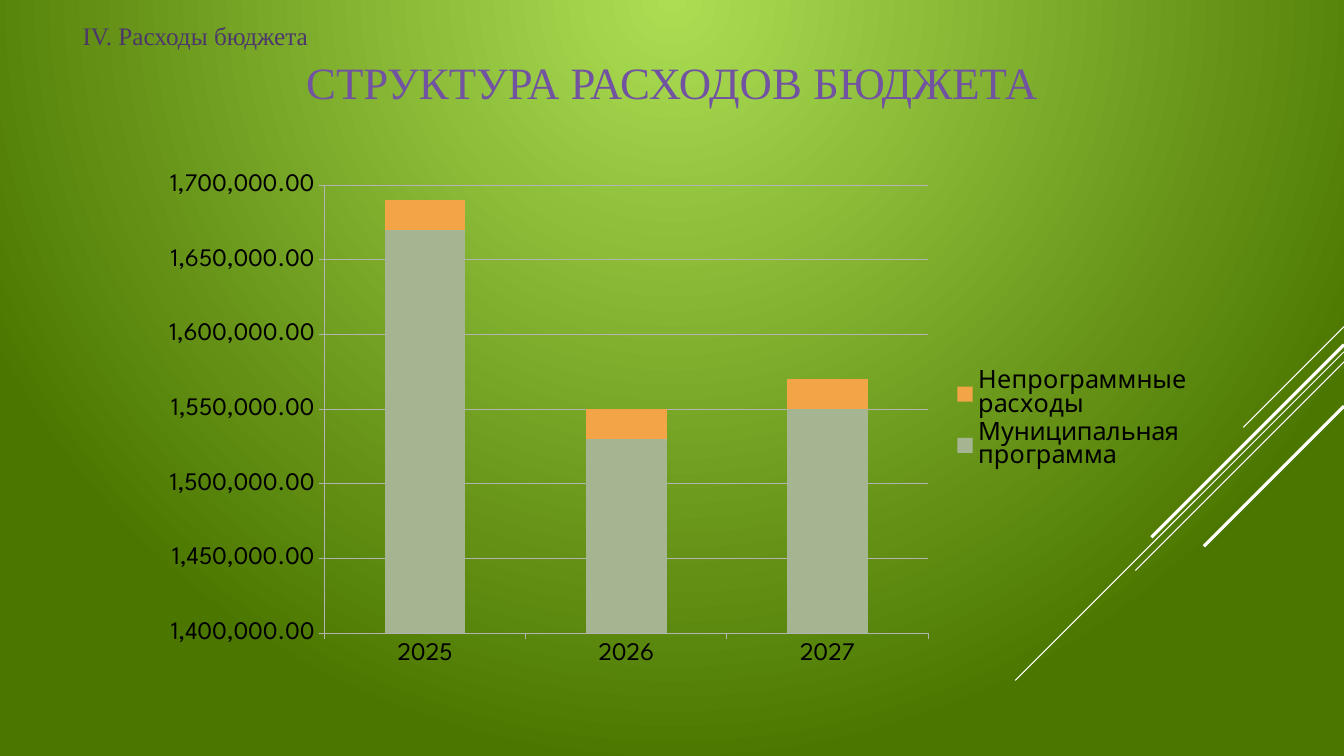
from lxml import etree
from pptx import Presentation
from pptx.chart.data import CategoryChartData
from pptx.dml.color import RGBColor
from pptx.enum.chart import XL_CHART_TYPE as CT, XL_LEGEND_POSITION as LP, XL_TICK_MARK as TM
from pptx.enum.shapes import MSO_CONNECTOR as MC
from pptx.enum.text import MSO_ANCHOR, PP_ALIGN
from pptx.oxml import parse_xml
from pptx.oxml.ns import nsdecls, qn
from pptx.util import Inches, Pt


def rgb(value):
    return RGBColor.from_string(value)


def apply(target, **formats):
    for name, value in formats.items():
        setattr(target, name, value)


class BudgetSlide:
    """Holds the style and the current slide and draws each kind of element."""
    text_font = "Times New Roman"
    chart_font = "League Spartan"
    axis_color = "B3B3B3"

    def __init__(self, prs):
        self.s = prs.slides.add_slide(prs.slide_layouts[6])

    def background(self, center, edge):
        fill = self.s.background.fill
        fill.gradient()
        for stop, color, position in zip(fill.gradient_stops, (center, edge), (0, 1)):
            stop.color.rgb = rgb(color)
            stop.position = position
        grad = self.s.element.find(".//" + qn("a:gradFill"))
        grad.replace(grad.find(qn("a:lin")), parse_xml(
            f'<a:path {nsdecls("a")} path="circle">'
            '<a:fillToRect l="50000" t="0" r="50000" b="100000"/></a:path>'))

    def diagonal(self, right, top, reach, width):
        line = self.s.shapes.add_connector(MC.STRAIGHT, Inches(right), Inches(top),
                                           Inches(right - reach), Inches(top + reach))
        line.line.color.rgb = rgb("FFFFFF")
        line.line.width = Pt(width)
        etree.SubElement(line.element.spPr, qn("a:effectLst"))

    def text(self, words, box, size, color, align):
        tf = self.s.shapes.add_textbox(*map(Inches, box)).text_frame
        apply(tf, word_wrap=True, vertical_anchor=MSO_ANCHOR.MIDDLE)
        p = tf.paragraphs[0]
        p.alignment = align
        r = p.add_run()
        r.text = words
        apply(r.font, name=self.text_font, size=Pt(size))
        r.font.color.rgb = rgb(color)

    def chart(self, box, years, series):
        data = CategoryChartData(number_format="#,##0.00")
        data.categories = years
        for name, values, _ in series:
            data.add_series(name, values)
        chart = self.s.shapes.add_chart(CT.COLUMN_STACKED, *map(Inches, box), data).chart
        apply(chart, has_title=False, has_legend=True)
        apply(chart.font, name=self.chart_font, size=Pt(18))
        chart.font.color.rgb = rgb("000000")
        apply(chart.legend, position=LP.RIGHT, include_in_layout=False)
        plot = chart.plots[0]
        apply(plot, gap_width=150, overlap=100, vary_by_categories=False)
        for bar, (_, _, color) in zip(plot.series, series):
            bar.format.fill.solid()
            bar.format.fill.fore_color.rgb = rgb(color)
        values_axis = chart.value_axis
        apply(values_axis, minimum_scale=1400000, maximum_scale=1700000, major_unit=50000,
              has_major_gridlines=True)
        apply(values_axis.tick_labels, number_format="#,##0.00", number_format_is_linked=False)
        for axis in (chart.category_axis, values_axis):
            apply(axis, major_tick_mark=TM.OUTSIDE, minor_tick_mark=TM.NONE)
            axis.format.line.color.rgb = rgb(self.axis_color)
        values_axis.major_gridlines.format.line.color.rgb = rgb(self.axis_color)


def main():
    prs = Presentation()
    apply(prs, slide_width=Inches(13.33), slide_height=Inches(7.5))
    slide = BudgetSlide(prs)
    slide.background("ACDE54", "4B7700")
    for top, reach, width in ((3.24, 1, 0.75), (3.49, 3.26, 0.75), (3.59, 2.07, 0.75),
                              (3.42, 1.91, 2.25), (4.03, 1.39, 2.25)):
        slide.diagonal(13.33, top, reach, width)
    slide.text("IV. Расходы бюджета", (0.72, 0.19, 11.89, 0.32), 18, "4C376B", PP_ALIGN.LEFT)
    slide.text("СТРУКТУРА РАСХОДОВ БЮДЖЕТА", (0.72, 0.52, 11.89, 0.57), 32, "7153A1",
               PP_ALIGN.CENTER)
    slide.chart((1.47, 1.62, 10.47, 5.09), ("2025", "2026", "2027"), (
        ("Муниципальная программа", (1670000, 1530000, 1550000), "A5B592"),
        ("Непрограммные расходы", (20000, 20000, 20000), "F3A447"),
    ))
    prs.save("out.pptx")


if __name__ == "__main__":
    main()
